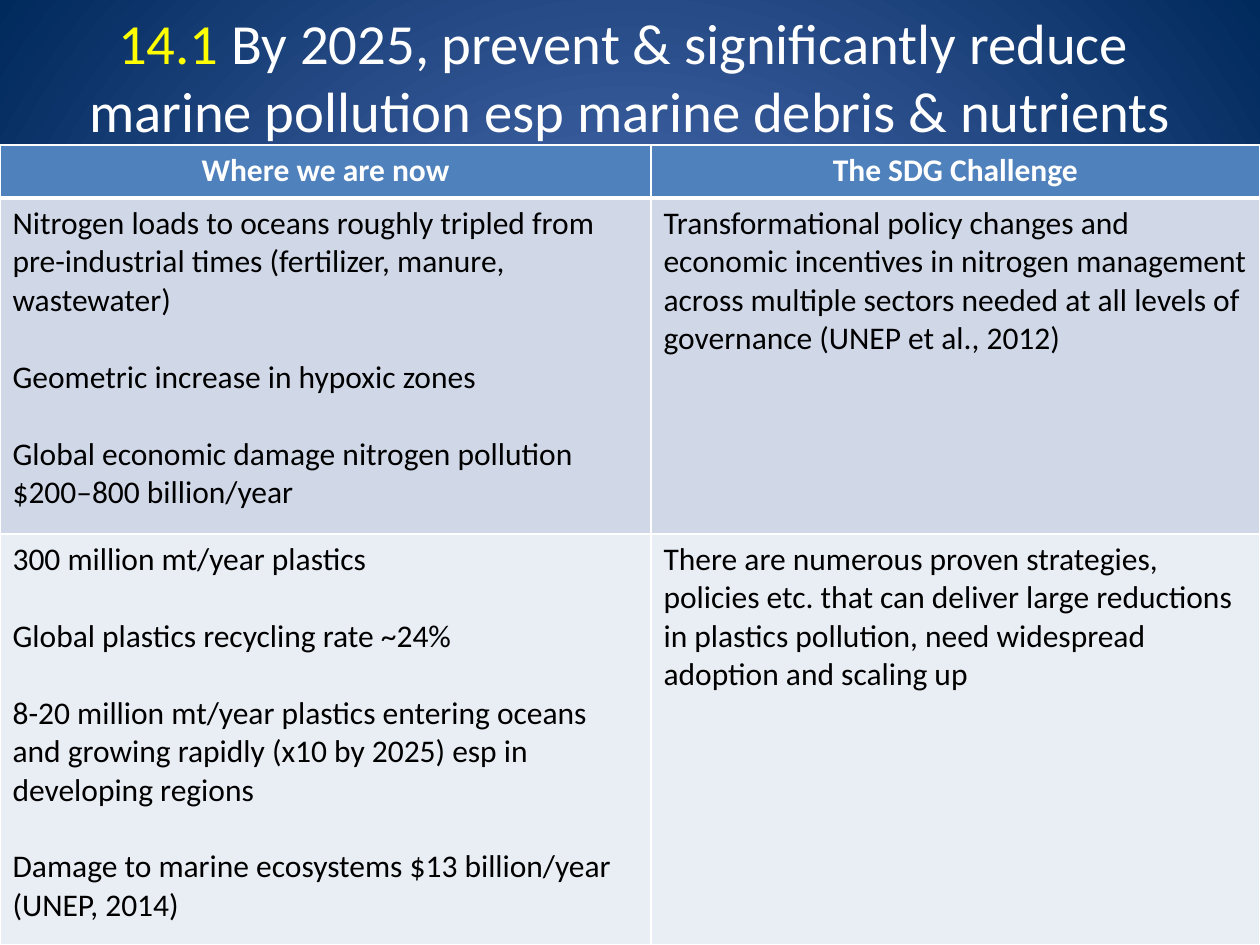
from lxml import etree
from pptx import Presentation
from pptx.dml.color import RGBColor
from pptx.enum.text import MSO_ANCHOR, PP_ALIGN
from pptx.oxml.ns import qn
from pptx.util import Pt

PX = 914400 // 126
CENTER, LEFT = PP_ALIGN.CENTER, PP_ALIGN.LEFT
MIDDLE = MSO_ANCHOR.MIDDLE
FONT = "Calibri"
BLANK_LAYOUT = 6
PARAGRAPH_GAP = 22
COLORS = {
    "glow": "5E7CC5",
    "navy": "00295C",
    "yellow": "FFFF00",
    "white": "FFFFFF",
    "black": "000000",
    "header": "4F81BD",
    "band_dark": "D0D8E8",
    "band_light": "E9EDF4",
}

TITLE_NUMBER = "14.1"
TITLE_LINES = [
    " By 2025, prevent & significantly reduce ",
    "marine pollution esp marine debris & nutrients",
]
COLUMN_WIDTHS = [651, 609]
ROW_HEIGHTS = [53, 336, 411]
ROW_FILLS = ["header", "band_dark", "band_light"]
ROWS = [
    [["Where we are now"], ["The SDG Challenge"]],
    [
        [
            "Nitrogen loads to oceans roughly tripled from pre-industrial times "
            "(fertilizer, manure, wastewater)",
            "Geometric increase in hypoxic zones",
            "Global economic damage nitrogen pollution $200–800 billion/year",
        ],
        [
            "Transformational policy changes and economic incentives in nitrogen "
            "management across multiple sectors needed at all levels of "
            "governance (UNEP et al., 2012)",
        ],
    ],
    [
        [
            "300 million mt/year plastics",
            "Global plastics recycling rate ~24%",
            "8-20 million mt/year plastics entering oceans and growing rapidly "
            "(x10 by 2025) esp in developing regions",
            "Damage to marine ecosystems $13 billion/year (UNEP, 2014)",
        ],
        [
            "There are numerous proven strategies, policies etc. that can deliver "
            "large reductions in plastics pollution, need widespread adoption "
            "and scaling up",
        ],
    ],
]


def px(value):
    return value * PX


def color(name):
    return RGBColor.from_string(COLORS[name])


def style_run(run, size, color_name, bold=False):
    run.font.name = FONT
    run.font.size = Pt(size)
    run.font.bold = bold
    run.font.color.rgb = color(color_name)


def set_radial_background(slide):
    fill = slide.background.fill
    fill.gradient()
    for stop, position, name in zip(fill.gradient_stops, (0, 1), ("glow", "navy")):
        stop.position = position
        stop.color.rgb = color(name)
    gradient = slide.background._cSld.find(".//" + qn("a:gradFill"))
    linear = gradient.find(qn("a:lin"))
    path = etree.Element(qn("a:path"), path="circle")
    etree.SubElement(path, qn("a:fillToRect"), l="50000", t="50000", r="50000", b="50000")
    gradient.replace(linear, path)


def add_title(slide):
    box = slide.shapes.add_textbox(0, px(1), px(1260), px(150))
    text_frame = box.text_frame
    text_frame.word_wrap = True
    text_frame.vertical_anchor = MIDDLE
    paragraph = text_frame.paragraphs[0]
    paragraph.text = TITLE_NUMBER + "\v".join(TITLE_LINES)
    paragraph.alignment = CENTER
    first_run = paragraph.runs[0]
    first_run.text = TITLE_LINES[0]
    number_run = paragraph.add_run()
    number_run.text = TITLE_NUMBER
    first_run._r.addprevious(number_run._r)
    for run in paragraph.runs:
        style_run(run, 32.4, "white")
    number_run.font.color.rgb = color("yellow")


def set_borders(cell, top, bottom):
    properties = cell._tc.get_or_add_tcPr()
    widths = {"lnL": 1, "lnR": 1, "lnT": top, "lnB": bottom}
    for index, (tag, width) in enumerate(widths.items()):
        line = etree.Element(qn("a:" + tag), w=str(Pt(width)))
        fill = etree.SubElement(line, qn("a:solidFill"))
        etree.SubElement(fill, qn("a:srgbClr"), val=COLORS["white"])
        properties.insert(index, line)


def fill_cell(cell, texts, fill_name, is_header):
    cell.fill.solid()
    cell.fill.fore_color.rgb = color(fill_name)
    cell.text_frame.text = "\n".join(texts)
    for index, paragraph in enumerate(cell.text_frame.paragraphs):
        paragraph.alignment = CENTER if is_header else LEFT
        if index:
            paragraph.space_before = Pt(PARAGRAPH_GAP)
        for run in paragraph.runs:
            style_run(run, 18, "white" if is_header else "black", is_header)


def add_comparison_table(slide):
    frame = slide.shapes.add_table(
        len(ROWS), len(COLUMN_WIDTHS), 0, px(145), px(sum(COLUMN_WIDTHS)), px(sum(ROW_HEIGHTS))
    )
    table = frame.table
    for column, width in zip(table.columns, COLUMN_WIDTHS):
        column.width = px(width)
    for row_index, row_texts in enumerate(ROWS):
        table.rows[row_index].height = px(ROW_HEIGHTS[row_index])
        for column_index, texts in enumerate(row_texts):
            cell = table.cell(row_index, column_index)
            fill_cell(cell, texts, ROW_FILLS[row_index], row_index == 0)
            set_borders(cell, 3 if row_index == 1 else 1, 3 if row_index == 0 else 1)


def main():
    presentation = Presentation()
    presentation.slide_width = px(1260)
    presentation.slide_height = px(945)
    slide = presentation.slides.add_slide(presentation.slide_layouts[BLANK_LAYOUT])
    set_radial_background(slide)
    add_title(slide)
    add_comparison_table(slide)
    presentation.save("out.pptx")


if __name__ == "__main__":
    main()
